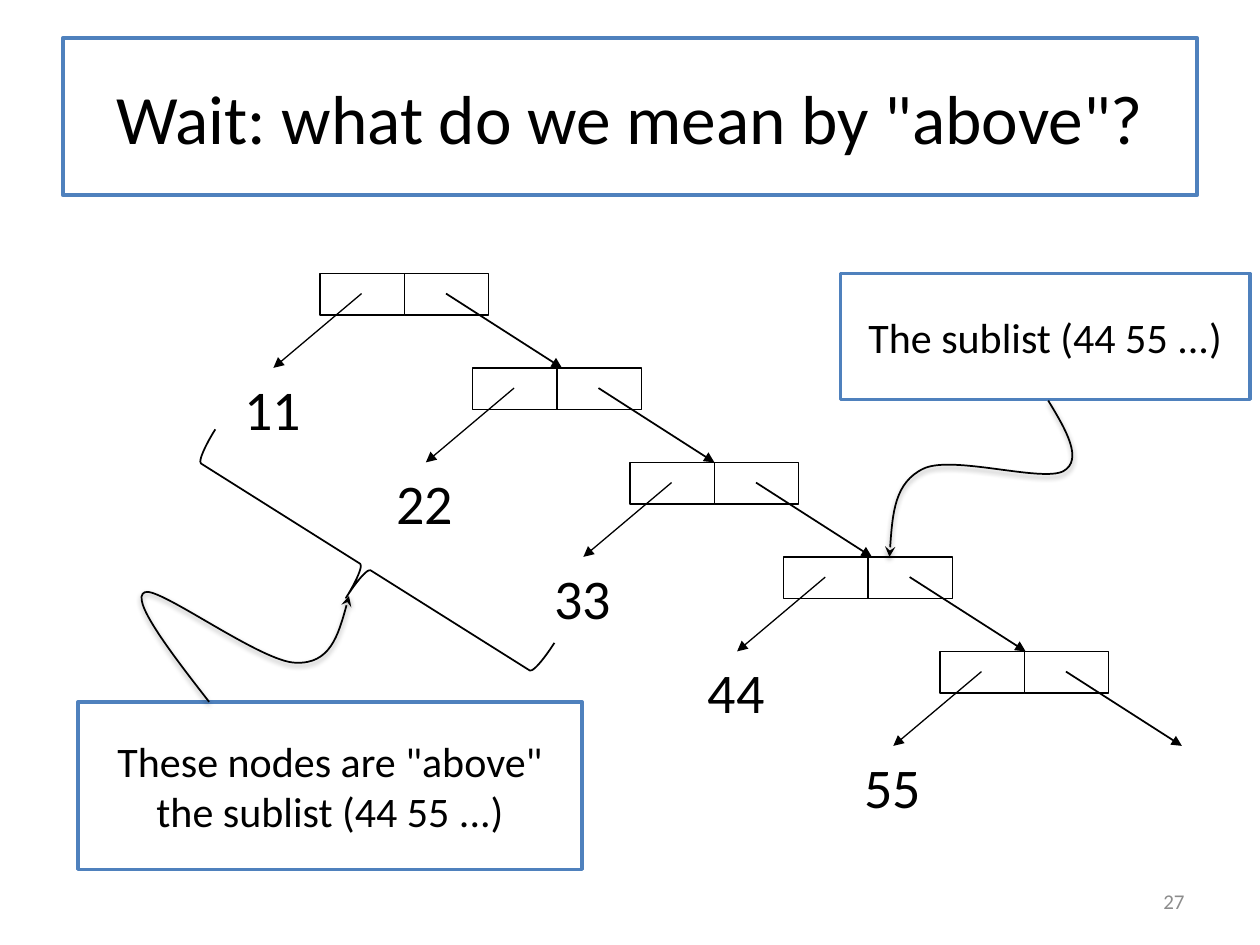
from lxml import etree
from pptx import Presentation
from pptx import util as u
from pptx.dml.color import RGBColor
from pptx.enum import shapes, text
from pptx.oxml.ns import qn

BLACK = RGBColor(0x00, 0x00, 0x00)
WHITE = RGBColor(0xFF, 0xFF, 0xFF)
BLUE = RGBColor(0x4F, 0x81, 0xBD)
GRAY = RGBColor(0x8C, 0x8C, 0x8C)

CELL_WIDTH, CELL_HEIGHT = 0.67, 0.33
NODES = [
    ("11", 2.54, 2.17),
    ("22", 3.75, 2.92),
    ("33", 5.0, 3.67),
    ("44", 6.22, 4.42),
    ("55", 7.46, 5.17),
]
SUBLIST_CURVE = [
    (8.32, 3.18), (8.46, 3.41), (8.6, 3.65), (8.44, 3.74), (8.27, 3.83),
    (7.56, 3.61), (7.33, 3.72), (7.1, 3.83), (7.08, 4.12), (7.06, 4.42),
]
ABOVE_CURVE = [
    (1.66, 5.57), (1.34, 5.16), (1.03, 4.75), (1.15, 4.7), (1.26, 4.65),
    (2.08, 5.26), (2.35, 5.26), (2.62, 5.27), (2.7, 5.0), (2.77, 4.73),
]


def inches(*values):
    """Convert numbers to lengths in inches."""
    return [u.Inches(value) for value in values]


def write_text(shape, content, size=24, color=BLACK, align=text.PP_ALIGN.CENTER,
               anchor=text.MSO_ANCHOR.MIDDLE, wrap=True):
    """Write one formatted paragraph into a shape."""
    frame = shape.text_frame
    frame.word_wrap = wrap
    frame.vertical_anchor = anchor
    paragraph = frame.paragraphs[0]
    paragraph.alignment = align
    run = paragraph.add_run()
    run.text = content
    run.font.name = "Calibri"
    run.font.size = u.Pt(size)
    run.font.color.rgb = color


def style_shape(shape, line_color=BLACK, line_width=1, fill=None):
    """Set the outline and fill of a shape and drop its shadow."""
    shape.shadow.inherit = False
    shape.line.color.rgb = line_color
    shape.line.width = u.Pt(line_width)
    if fill is None:
        shape.fill.background()
    else:
        shape.fill.solid()
        shape.fill.fore_color.rgb = fill


def add_arrowhead(shape, kind):
    """Put an arrowhead at the end of a line."""
    etree.SubElement(shape.line._get_or_add_ln(), qn("a:tailEnd"), type=kind)


def add_arrow(parent, start, end, width):
    """Draw a straight black arrow between two points."""
    arrow = parent.add_connector(
        shapes.MSO_CONNECTOR.STRAIGHT, *inches(*start, *end))
    arrow.line.color.rgb = BLACK
    arrow.line.width = u.Pt(width)
    add_arrowhead(arrow, "triangle")
    etree.SubElement(arrow._element.spPr, qn("a:effectLst"))


def add_curve(slide, points):
    """Draw a shadowed curved arrow from a start point and Bezier triples."""
    builder = slide.shapes.build_freeform(*inches(*points[0]), scale=1.0)
    builder.add_line_segments([inches(*point) for point in points[1:]], close=False)
    curve = builder.convert_to_shape()
    style_shape(curve)
    add_arrowhead(curve, "stealth")
    segments = list(curve._element.iter(qn("a:lnTo")))
    for index in range(0, len(segments), 3):
        bezier = etree.Element(qn("a:cubicBezTo"))
        segments[index].addprevious(bezier)
        for segment in segments[index:index + 3]:
            bezier.append(segment[0])
            segment.getparent().remove(segment)
    shadow = etree.SubElement(
        curve._element.spPr.find(qn("a:effectLst")), qn("a:outerShdw"),
        blurRad=str(u.Pt(3.1)), dist=str(u.Pt(1.6)), dir="5400000", rotWithShape="0")
    color = etree.SubElement(shadow, qn("a:srgbClr"), val=str(BLACK))
    etree.SubElement(color, qn("a:alpha"), val="38000")


def add_node(slide, left, top):
    """Group the two cells of a list node with their outgoing arrows."""
    group = slide.shapes.add_group_shape().shapes
    for column in range(2):
        cell = group.add_shape(
            shapes.MSO_SHAPE.RECTANGLE,
            *inches(left + column * CELL_WIDTH, top, CELL_WIDTH, CELL_HEIGHT))
        style_shape(cell, line_width=0.75)
    for start, end, width in ((0.33, -0.37, 0.75), (1.0, 1.92, 1)):
        add_arrow(group, (left + start, top + 0.16), (left + end, top + 0.75), width)


def add_label(slide, value, left, top):
    """Write the value that a node points to."""
    label = slide.shapes.add_textbox(*inches(left, top, 0.66, 0.64))
    write_text(label, value, size=32, align=text.PP_ALIGN.LEFT,
               anchor=text.MSO_ANCHOR.TOP, wrap=False)
    label.text_frame.auto_size = text.MSO_AUTO_SIZE.SHAPE_TO_FIT_TEXT


def add_list(slide):
    """Draw the linked list with its values."""
    for _, left, top in NODES:
        add_node(slide, left, top)
    for value, left, top in NODES:
        add_label(slide, value, left - 0.7, top + 0.75)


def add_brace(slide, left, top, width, height):
    """Draw the slanted brace under the nodes above the sublist."""
    brace = slide.shapes.add_shape(
        shapes.MSO_SHAPE.LEFT_BRACE, *inches(left, top, width, height))
    brace.rotation = 302.2
    style_shape(brace)


def add_callout(slide, content, left, top, width, height):
    """Draw a framed explanation box."""
    callout = slide.shapes.add_shape(
        shapes.MSO_SHAPE.RECTANGLE, *inches(left, top, width, height))
    style_shape(callout, BLUE, 2, WHITE)
    write_text(callout, content)


def add_title(slide, content, left, top, width, height):
    """Place and frame the title placeholder."""
    title = slide.shapes.title
    title.left, title.top, title.width, title.height = inches(left, top, width, height)
    style_shape(title, BLUE, 2.25, WHITE)
    write_text(title, content, size=39.6)


def add_slide_number(slide, number, left, top, width, height):
    """Write the slide number in the bottom corner."""
    box = slide.shapes.add_textbox(*inches(left, top, width, height))
    write_text(box, number, size=12, color=GRAY, align=text.PP_ALIGN.RIGHT)


def main():
    """Build the slide and save the presentation."""
    presentation = Presentation()
    presentation.slide_width, presentation.slide_height = inches(10, 7.5)
    slide = presentation.slides.add_slide(presentation.slide_layouts[5])
    add_title(slide, 'Wait: what do we mean by "above"?', 0.5, 0.3, 9, 1.25)
    add_slide_number(slide, "27", 7.17, 6.95, 2.33, 0.4)
    add_list(slide)
    add_brace(slide, 2.61, 2.91, 0.58, 3.18)
    add_callout(slide, 'These nodes are "above" the sublist (44 55 ...)',
                0.62, 5.57, 4, 1.33)
    add_callout(slide, "The sublist (44 55 ...)", 6.67, 2.17, 3.25, 1)
    for points in (SUBLIST_CURVE, ABOVE_CURVE):
        add_curve(slide, points)
    presentation.save("out.pptx")


if __name__ == "__main__":
    main()
